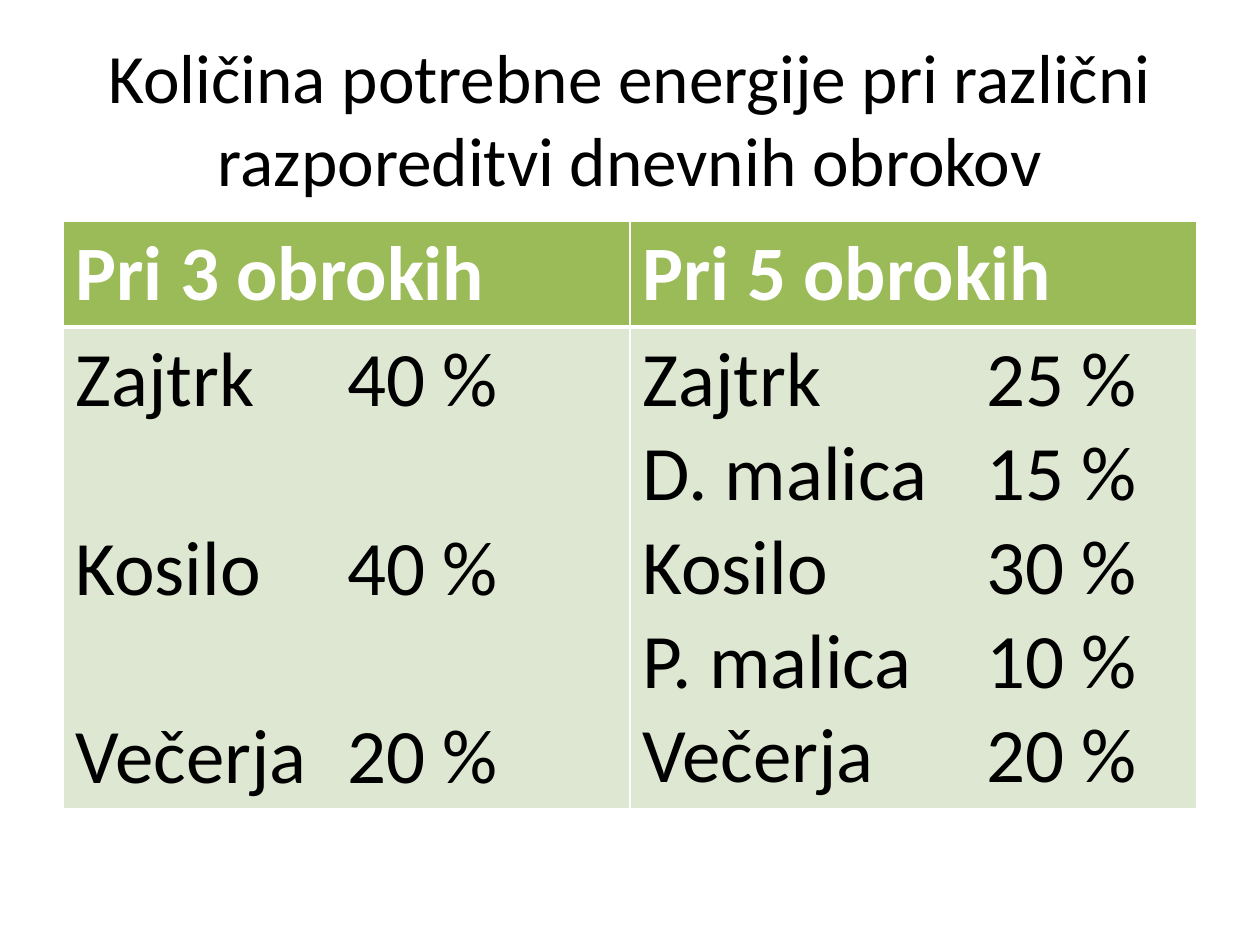
from dataclasses import dataclass

from pptx import Presentation
from pptx import util as u
from pptx.dml.color import RGBColor
from pptx.enum import text
from pptx.oxml.ns import qn
from lxml import etree

SCALE = 914400 / 126


@dataclass(frozen=True)
class Theme:
    font: str = "Calibri"
    ink: str = "000000"
    white: str = "FFFFFF"
    head: str = "9BBB59"
    body: str = "DEE7D1"
    title: float = 39.6
    cell: float = 44


THEME = Theme()


def px(n):
    return u.Emu(round(n * SCALE))


def write(frame, lines, size, color=THEME.ink, bold=False,
          align=text.PP_ALIGN.LEFT, tab=None, gap=0):
    for i, line in enumerate(lines):
        para = frame.paragraphs[0] if i == 0 else frame.add_paragraph()
        if tab:
            tabs = etree.SubElement(para._p.get_or_add_pPr(), qn("a:tabLst"))
            etree.SubElement(tabs, qn("a:tab"), pos=str(px(tab)), algn="l")
        para.alignment = align
        if i and gap:
            para.space_before = u.Pt(gap)
        run = para.add_run()
        run.text = line
        font = run.font
        font.name, font.size, font.bold = THEME.font, u.Pt(size), bold
        font.color.rgb = RGBColor.from_string(color)


def add_title(slide, words):
    box = slide.shapes.add_textbox(px(63), px(38), px(1134), px(158))
    frame = box.text_frame
    frame.word_wrap = True
    frame.vertical_anchor = text.MSO_ANCHOR.MIDDLE
    write(frame, [words], THEME.title, align=text.PP_ALIGN.CENTER)


def edge(cell, **widths):
    props = cell._tc.get_or_add_tcPr()
    for i, side in enumerate("LRTB"):
        line = etree.Element(qn(f"a:ln{side}"), w=str(u.Pt(widths.get(side, 1))))
        fill = etree.SubElement(line, qn("a:solidFill"))
        etree.SubElement(fill, qn("a:srgbClr"), val=THEME.white)
        props.insert(i, line)


def paint(cell, color, **widths):
    cell.fill.solid()
    cell.fill.fore_color.rgb = RGBColor.from_string(color)
    edge(cell, **widths)


def add_meals(slide, plans):
    heights = (106, 482)
    table = slide.shapes.add_table(
        2, len(plans), px(63), px(221), px(1134), px(sum(heights))).table
    for row, height in zip(table.rows, heights):
        row.height = px(height)
    for col, (name, meals, tab, gap) in enumerate(plans):
        head, body = table.cell(0, col), table.cell(1, col)
        paint(head, THEME.head, B=3)
        paint(body, THEME.body, T=3)
        write(head.text_frame, [name], THEME.cell, THEME.white, bold=True)
        lines = [f"{meal}\t{share} %" for meal, share in meals]
        write(body.text_frame, lines, THEME.cell, tab=tab, gap=gap)


def main():
    deck = Presentation()
    deck.slide_width, deck.slide_height = px(1260), px(945)
    slide = deck.slides.add_slide(deck.slide_layouts[6])
    add_title(slide, "Količina potrebne energije pri različni "
                     "razporeditvi dnevnih obrokov")
    three = [("Zajtrk", 40), ("Kosilo", 40), ("Večerja", 20)]
    five = [("Zajtrk", 25), ("D. malica", 15), ("Kosilo", 30),
            ("P. malica", 10), ("Večerja", 20)]
    add_meals(slide, [("Pri 3 obrokih", three, 272, 54),
                      ("Pri 5 obrokih", five, 344, 0)])
    deck.save("out.pptx")


if __name__ == "__main__":
    main()
